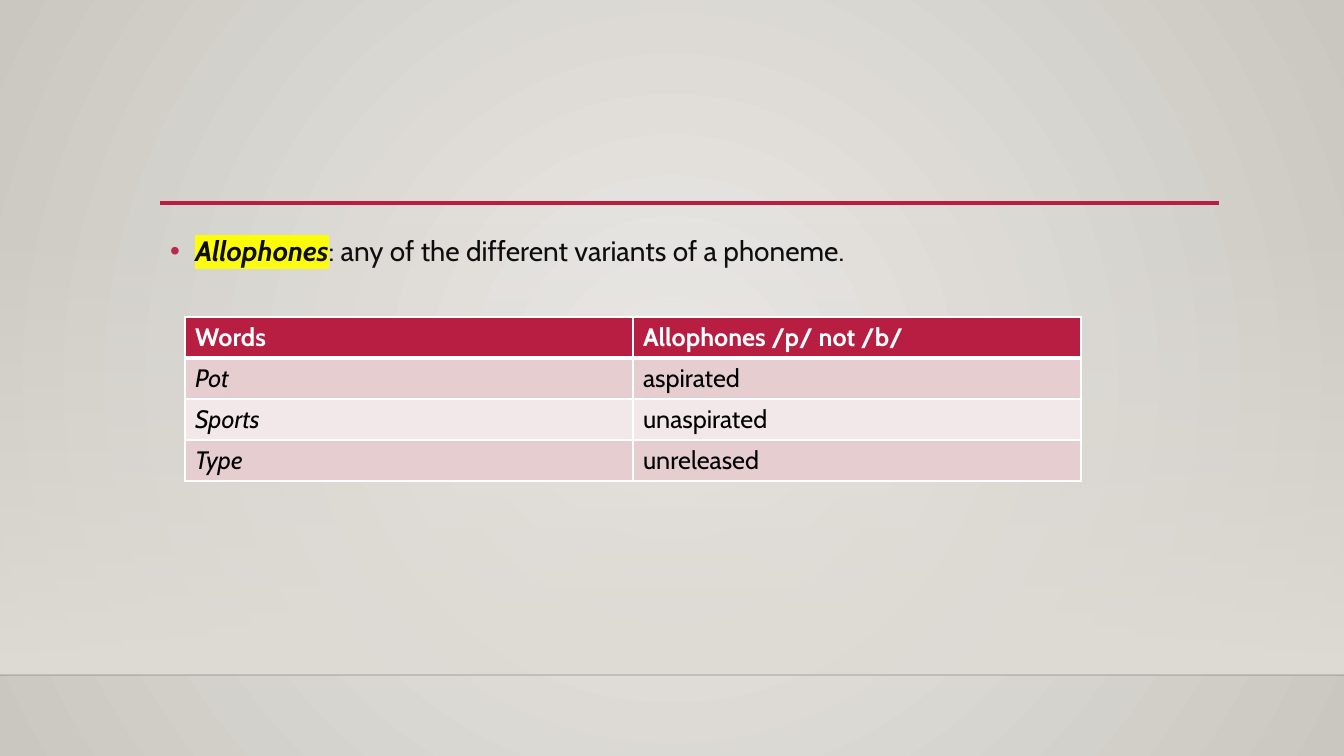
from pptx import Presentation
from pptx.dml.color import RGBColor
from pptx.enum.shapes import MSO_CONNECTOR as Connector, MSO_SHAPE as Preset
from pptx.enum.text import MSO_AUTO_SIZE as AutoSize
from pptx.oxml import parse_xml
from pptx.oxml.ns import nsdecls, qn
from pptx.util import Emu, Pt

SLIDE_WIDTH, SLIDE_HEIGHT = 1344, 756
EMU_PER_PX = 12192000 / SLIDE_WIDTH

CRIMSON = RGBColor(0xB7, 0x1E, 0x42)
PINK = RGBColor(0xE6, 0xCD, 0xCF)
PALE_PINK = RGBColor(0xF3, 0xE8, 0xE9)
LIGHT_STONE = RGBColor(0xEC, 0xEA, 0xE7)
DARK_STONE = RGBColor(0xCA, 0xC7, 0xC1)
FLOOR_STONE = RGBColor(0xDF, 0xDB, 0xD5)
YELLOW = RGBColor(0xFF, 0xFF, 0x00)
BLACK = RGBColor(0x00, 0x00, 0x00)
NEAR_BLACK = RGBColor(0x00, 0x00, 0x01)
WHITE = RGBColor(0xFF, 0xFF, 0xFF)

FONT = "Cabin"
WORD_ROWS = [
    ("Words", "Allophones /p/ not /b/"),
    ("Pot", "aspirated"),
    ("Sports", "unaspirated"),
    ("Type", "unreleased"),
]


def px(length):
    return Emu(round(length * EMU_PER_PX))


def element(tag, attributes="", content=""):
    return parse_xml(f"<a:{tag} {nsdecls('a')} {attributes}>{content}</a:{tag}>")


def color_xml(color):
    return f'<a:srgbClr val="{color}"/>'


def set_alpha(color_element, percent):
    color_element.append(element("alpha", f'val="{percent * 1000}"'))


def add_run(paragraph, text, color, **formats):
    run = paragraph.add_run()
    run.text = text
    for name, value in {"name": FONT, **formats}.items():
        setattr(run.font, name, value)
    run.font.color.rgb = color
    return run


def set_gradient(fill, start, end):
    fill.gradient()
    for stop, color in zip(fill.gradient_stops, (start, end)):
        stop.color.rgb = color


def paint_background(slide):
    """Fill the slide with a gradient that spreads from its centre."""
    set_gradient(slide.background.fill, LIGHT_STONE, DARK_STONE)
    linear = next(slide.element.iter(qn("a:lin")))
    center = '<a:fillToRect l="50000" t="50000" r="50000" b="50000"/>'
    linear.getparent().replace(linear, element("path", 'path="circle"', center))


def add_fading_wall(slide, left, top, width, height):
    """Add a rectangle that goes from clear at the top to solid at the bottom."""
    wall = slide.shapes.add_shape(
        Preset.RECTANGLE, px(left), px(top), px(width), px(height))
    wall.shadow.inherit = False
    wall.line.fill.background()
    set_gradient(wall.fill, FLOOR_STONE, FLOOR_STONE)
    wall.fill.gradient_angle = 270
    set_alpha(next(wall.element.iter(qn("a:srgbClr"))), 0)


def add_rule(slide, left, right, y, color, weight, opacity=100):
    rule = slide.shapes.add_connector(
        Connector.STRAIGHT, px(left), px(y), px(right), px(y))
    rule.line.color.rgb = color
    rule.line.width = Pt(weight)
    if opacity < 100:
        set_alpha(next(rule.element.iter(qn("a:srgbClr"))), opacity)
    rule.element.spPr.append(element("effectLst"))


def fill_definition(body, left, top, width, height):
    body.left, body.top, body.width, body.height = map(px, (left, top, width, height))
    frame = body.text_frame
    frame.word_wrap = True
    frame.auto_size = AutoSize.NONE

    paragraph = frame.paragraphs[0]
    properties = paragraph._p.get_or_add_pPr()
    properties.set("marL", "228600")
    properties.set("indent", "-228600")
    properties.append(element("buClr", content=color_xml(CRIMSON)))
    properties.append(element("buFont", 'typeface="Arial"'))
    properties.append(element("buChar", 'char="•"'))
    paragraph.line_spacing = 1.2
    paragraph.space_before = Pt(0)

    term = add_run(paragraph, "Allophones", BLACK, size=Pt(20), bold=True, italic=True)
    term_fill = term._r.rPr.find(qn("a:solidFill"))
    term_fill.addnext(element("highlight", content=color_xml(YELLOW)))
    add_run(paragraph, ": any of the different variants of a phoneme.", BLACK,
            size=Pt(20), bold=False, italic=False)


def set_borders(cell, widths):
    """Draw white borders; widths maps a side letter to points."""
    properties = cell._tc.get_or_add_tcPr()
    for side, points in widths.items():
        properties.append(element(
            f"ln{side}", f'w="{Pt(points)}"',
            f"<a:solidFill>{color_xml(WHITE)}</a:solidFill>"))


def add_word_table(slide, left, top, width, row_height):
    table = slide.shapes.add_table(
        len(WORD_ROWS), len(WORD_ROWS[0]), px(left), px(top), px(width),
        px(row_height * len(WORD_ROWS))).table
    for row, texts in enumerate(WORD_ROWS):
        header = row == 0
        row_fill = CRIMSON if header else (PALE_PINK, PINK)[row % 2]
        for column, text in enumerate(texts):
            cell = table.cell(row, column)
            set_borders(cell, {"L": 1, "R": 1, "T": 3 if row == 1 else 1,
                               "B": 3 if header else 1})
            cell.fill.solid()
            cell.fill.fore_color.rgb = row_fill
            add_run(cell.text_frame.paragraphs[0], text, WHITE if header else BLACK,
                    size=Pt(18), bold=header, italic=not header and column == 0)


def main():
    presentation = Presentation()
    presentation.slide_width = px(SLIDE_WIDTH)
    presentation.slide_height = px(SLIDE_HEIGHT)
    slide = presentation.slides.add_slide(presentation.slide_layouts[1])
    title = slide.shapes.title.element
    title.getparent().remove(title)

    paint_background(slide)
    add_fading_wall(slide, 0, 223, SLIDE_WIDTH, 452)
    add_rule(slide, 0, SLIDE_WIDTH, 675, NEAR_BLACK, 1, opacity=20)
    add_rule(slide, 160, 1219, 203, CRIMSON, 2.5)
    fill_definition(slide.placeholders[1], 160, 222, 1058, 380)
    add_word_table(slide, 185, 317, 896, 41)
    presentation.save("out.pptx")


if __name__ == "__main__":
    main()
